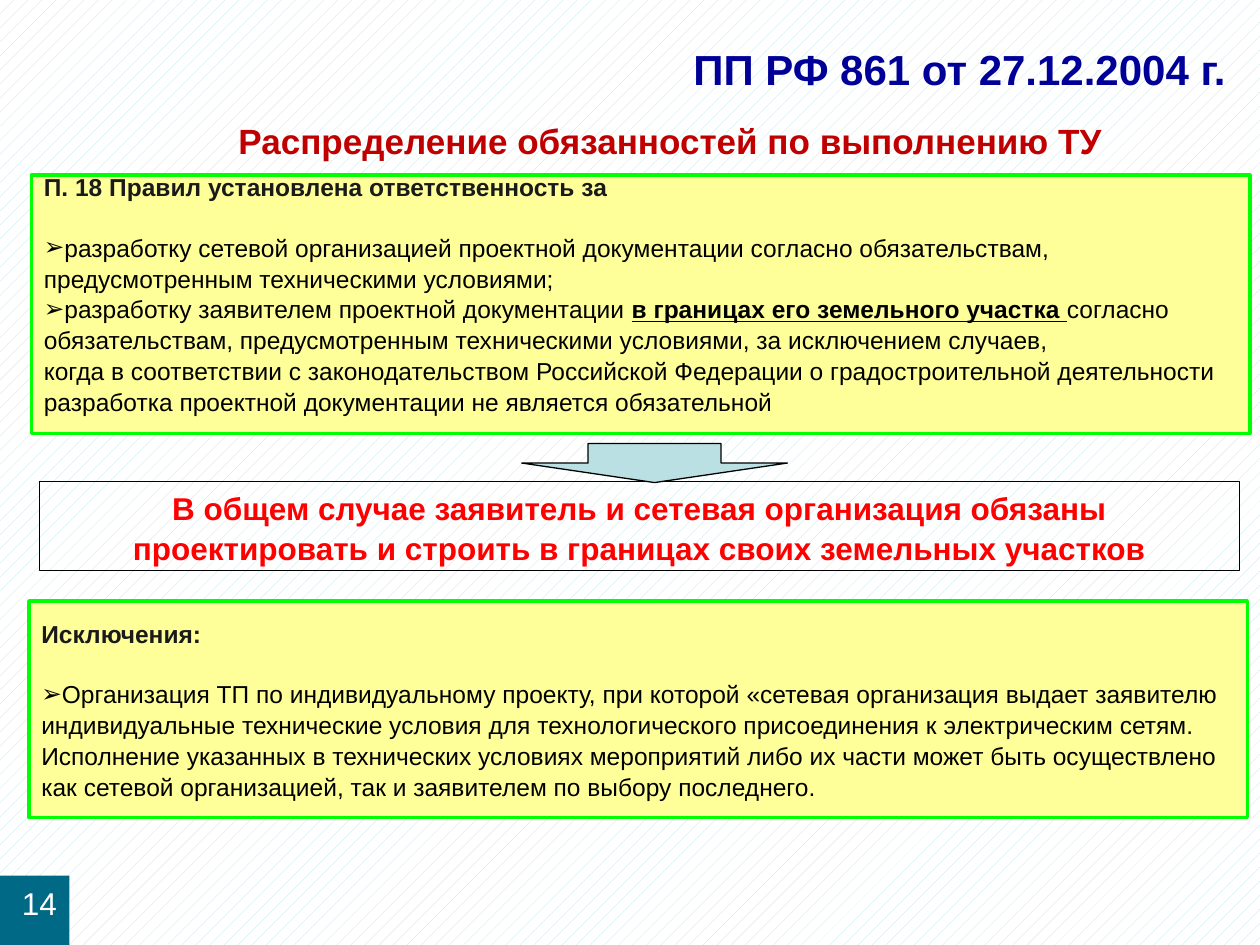
import pptx
import pptx.util
import pptx.dml.color
import pptx.enum.dml
import pptx.enum.shapes
import pptx.enum.text
from lxml import etree
from pptx.util import Inches

COLORS = {
    "pale": "BBE0E3", "white": "FFFFFF", "black": "000000", "heading": "1A1A1A",
    "navy": "000099", "crimson": "C00000", "red": "FF0000",
    "yellow": "FFFF99", "green": "00FF00", "teal": "006986",
}
FONT = "Arial"
LINE_SPACING = 1.05
ALIGN = pptx.enum.text.PP_ALIGN
ANCHOR = pptx.enum.text.MSO_ANCHOR
SHAPE = pptx.enum.shapes.MSO_SHAPE

DUTIES = [
    ("➢", ["разработку сетевой организацией проектной документации согласно обязательствам,"]),
    ("", ["предусмотренным техническими условиями;"]),
    ("➢", ["разработку заявителем проектной документации ",
           ("в границах его земельного участка ", {"bold": True, "underline": True}),
           "согласно"]),
    ("", ["обязательствам, предусмотренным техническими условиями, за исключением случаев,"]),
    ("", ["когда в соответствии с законодательством Российской Федерации о градостроительной деятельности"]),
    ("", ["разработка проектной документации не является обязательной"]),
]
EXCEPTIONS = [
    ("➢", ["Организация ТП по индивидуальному проекту, при которой «сетевая организация выдает заявителю"]),
    ("", ["индивидуальные технические условия для технологического присоединения к электрическим сетям."]),
    ("", ["Исполнение указанных в технических условиях мероприятий либо их части может быть осуществлено"]),
    ("", ["как сетевой организацией, так и заявителем по выбору последнего."]),
]


def rgb(name):
    return pptx.dml.color.RGBColor.from_string(COLORS[name])


def set_attrs(target, values):
    for name, value in values.items():
        setattr(target, name, value)


def add_run(p, text, size, color, **font):
    r = p.add_run()
    r.text = text
    set_attrs(r.font, {"name": FONT, "size": pptx.util.Pt(size), **font})
    r.font.color.rgb = rgb(color)


def add_bullet(p, char):
    pPr = p._p.get_or_add_pPr()
    pPr.set("marL", "0")
    pPr.set("indent", "0")
    ns = pptx.oxml.ns.qn
    etree.SubElement(pPr, ns("a:buFont")).set("typeface", FONT)
    etree.SubElement(pPr, ns("a:buChar")).set("char", char)


def add_box(s, box, kind=SHAPE.RECTANGLE, fill=None, line=None, width=0):
    sp = s.shapes.add_shape(kind, *map(Inches, box))
    sp.shadow.inherit = False
    if fill:
        sp.fill.solid()
        sp.fill.fore_color.rgb = rgb(fill)
    else:
        sp.fill.background()
    if line:
        sp.line.color.rgb = rgb(line)
        sp.line.width = pptx.util.Pt(width)
    else:
        sp.line.fill.background()
    return sp


def write_line(sp, text, size, color, align, anchor=ANCHOR.TOP, bold=True):
    tf = sp.text_frame
    set_attrs(tf, {"word_wrap": True, "vertical_anchor": anchor})
    p = tf.paragraphs[0]
    set_attrs(p, {"alignment": align, "line_spacing": LINE_SPACING})
    add_run(p, text, size, color, bold=bold)


def add_label(s, box, *text_format):
    write_line(s.shapes.add_textbox(*map(Inches, box)), *text_format)


def add_panel(s, box, heading, lines, bottom=0.05):
    """Yellow panel with a bold heading above bulleted and plain lines."""
    tf = add_box(s, box, fill="yellow", line="green", width=2).text_frame
    set_attrs(tf, {"word_wrap": True, "vertical_anchor": ANCHOR.MIDDLE,
                   "margin_right": Inches(0.02), "margin_bottom": Inches(bottom)})
    p = tf.paragraphs[0]
    set_attrs(p, {"alignment": ALIGN.LEFT, "line_spacing": LINE_SPACING,
                  "space_after": pptx.util.Pt(17)})
    add_run(p, heading, 14, "heading", bold=True)
    for bullet, parts in lines:
        p = tf.add_paragraph()
        set_attrs(p, {"alignment": ALIGN.LEFT, "line_spacing": LINE_SPACING})
        if bullet:
            add_bullet(p, bullet)
        for part in parts:
            text, font = (part, {}) if isinstance(part, str) else part
            add_run(p, text, 14, "black", **font)


def set_background(s):
    fill = s.background.fill
    fill.patterned()
    fill.pattern = pptx.enum.dml.MSO_PATTERN.PERCENT_10
    fill.fore_color.rgb = rgb("pale")
    fill.back_color.rgb = rgb("white")


def main():
    prs = pptx.Presentation()
    set_attrs(prs, {"slide_width": Inches(10), "slide_height": Inches(7.5)})
    s = prs.slides.add_slide(prs.slide_layouts[6])
    set_background(s)

    add_label(s, (1.19, 0.85, 8.26, 0.48), "Распределение обязанностей по выполнению ТУ",
              20, "crimson", ALIGN.CENTER, ANCHOR.BOTTOM)
    add_panel(s, (0.25, 1.39, 9.67, 2.05), "П. 18 Правил установлена ответственность за",
              DUTIES, bottom=0.22)
    add_label(s, (1.66, 0.28, 8.26, 0.51), "ПП РФ 861 от 27.12.2004 г. ",
              24, "navy", ALIGN.RIGHT, ANCHOR.MIDDLE)
    rule = add_box(s, (0.31, 3.82, 9.53, 0.71), line="black", width=0.5)
    write_line(rule, "В общем случае заявитель и сетевая организация обязаны "
               "проектировать и строить в границах своих земельных участков",
               18, "red", ALIGN.CENTER)
    add_box(s, (4.14, 3.52, 2.11, 0.31), SHAPE.DOWN_ARROW, "pale", "black", 0.75)
    add_panel(s, (0.23, 4.77, 9.67, 1.72), "Исключения:", EXCEPTIONS)
    number = add_box(s, (0, 6.95, 0.55, 0.55), fill="teal")
    write_line(number, "14", 18, "white", ALIGN.RIGHT, bold=False)
    prs.save("out.pptx")


if __name__ == "__main__":
    main()
